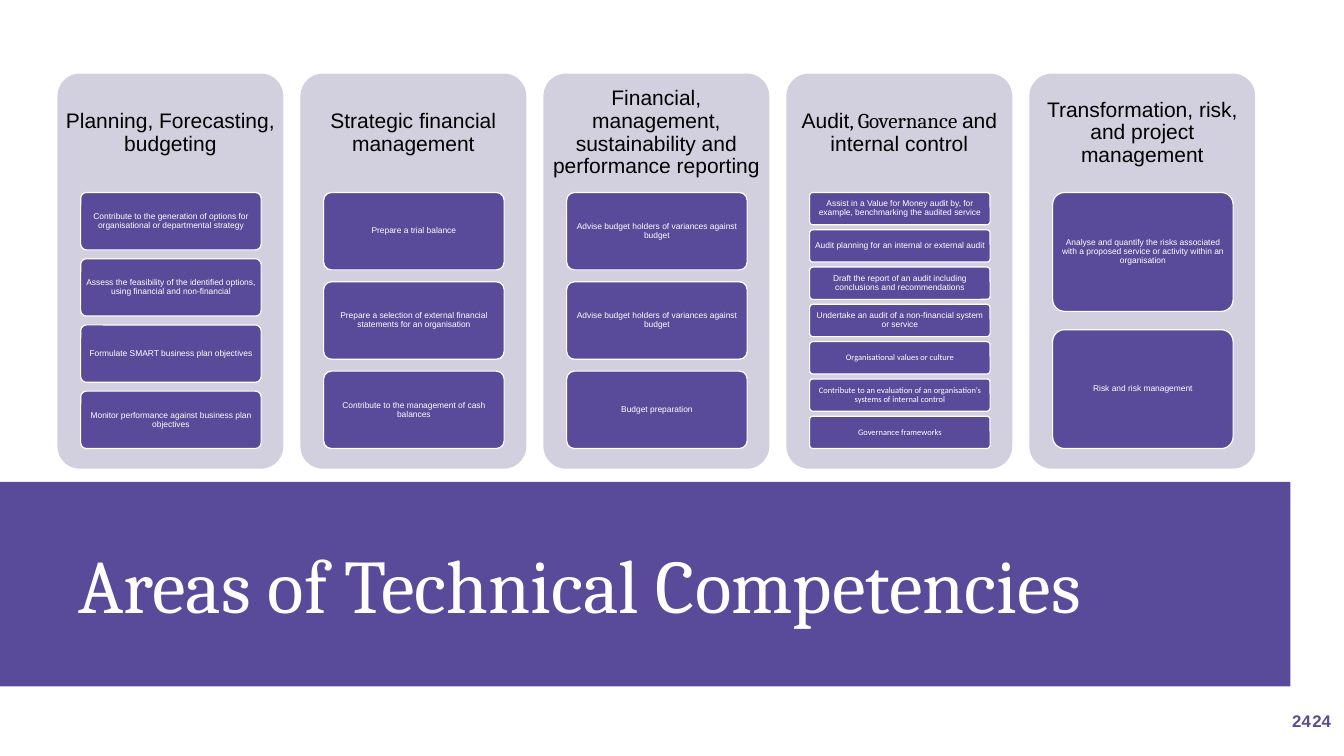
"""Build the slide of technical competency areas."""
from pptx import Presentation
from pptx.dml.color import RGBColor
from pptx.enum.shapes import MSO_SHAPE as Shape
from pptx.enum.text import MSO_ANCHOR as Anchor, PP_ALIGN as Align
from pptx.util import Inches, Pt

TITLE = "Areas of Technical Competencies"
PAGE = "24"
AREAS = [
    (["Planning, Forecasting, budgeting"], [
        "Contribute to the generation of options for organisational or departmental strategy",
        "Assess the feasibility of the identified options, using financial and non-financial",
        "Formulate SMART business plan objectives",
        "Monitor performance against business plan objectives",
    ]),
    (["Strategic financial management"], [
        "Prepare a trial balance",
        "Prepare a selection of external financial statements for an organisation",
        "Contribute to the management of cash balances",
    ]),
    (["Financial, management, sustainability and performance reporting"], [
        "Advise budget holders of variances against budget",
        "Advise budget holders of variances against budget",
        "Budget preparation",
    ]),
    (["Audit", (", Governance ", "Cambria"), "and internal control"], [
        "Assist in a Value for Money audit by, for example, benchmarking the audited service",
        "Audit planning for an internal or external audit",
        "Draft the report of an audit including conclusions and recommendations",
        "Undertake an audit of a non-financial system or service",
        ("Organisational values or culture", "Calibri"),
        ("Contribute to an evaluation of an organisation’s systems of internal control", "Calibri"),
        ("Governance frameworks", "Calibri"),
    ]),
    (["Transformation, risk, and project management"], [
        "Analyse and quantify the risks associated with a proposed service or activity within an organisation",
        "Risk and risk management",
    ]),
]

PURPLE = RGBColor(0x5A, 0x4B, 0x9A)
LILAC = RGBColor(0xD2, 0xD0, 0xDE)
WHITE = RGBColor(0xFF, 0xFF, 0xFF)
BLACK = RGBColor(0, 0, 0)

LEFT, TOP, STEP = 0.57, 0.73, 2.41
WIDE, TALL, HEAD = 2.24, 3.92, 1.18
INDENT, CARD = 0.23, 1.79
STACK, RATIO = 2.54, 0.154


def write(item, parts, size, color, font="Arial", bold=False, align=Align.CENTER,
          anchor=Anchor.MIDDLE, pad=(0.1, 0.05), spacing=None):
    """Fill a shape with one paragraph of text."""
    frame = item.text_frame
    frame.word_wrap = True
    frame.vertical_anchor = anchor
    frame.margin_left = frame.margin_right = Inches(pad[0])
    frame.margin_top = frame.margin_bottom = Inches(pad[1])
    para = frame.paragraphs[0]
    para.alignment = align
    if spacing:
        para.line_spacing = spacing
    for part in parts:
        words, face = (part, font) if isinstance(part, str) else part
        run = para.add_run()
        run.text = words
        run.font.size = Pt(size)
        run.font.name = face
        run.font.bold = bold
        run.font.color.rgb = color


def block(shapes, kind, box, fill, edge=None):
    """Add a filled shape, outlined if an edge colour is given."""
    item = shapes.add_shape(kind, *map(Inches, box))
    item.shadow.inherit = False
    item.fill.solid()
    item.fill.fore_color.rgb = fill
    if kind == Shape.ROUNDED_RECTANGLE:
        item.adjustments[0] = 0.1
    if edge is None:
        item.line.fill.background()
    else:
        item.line.color.rgb = edge
        item.line.width = Pt(0.85)
    return item


def label(shapes, box, parts, size, color, **style):
    """Add a text box."""
    write(shapes.add_textbox(*map(Inches, box)), parts, size, color, **style)


def main():
    """Draw the slide and save it."""
    deck = Presentation()
    deck.slide_width, deck.slide_height = Inches(13.33), Inches(7.5)
    shapes = deck.slides.add_slide(deck.slide_layouts[6]).shapes

    block(shapes, Shape.RECTANGLE, (0, 4.78, 12.8, 2.03), PURPLE)
    label(shapes, (0.68, 5.29, 11.97, 1.01), [TITLE], 54, WHITE, font="Cambria",
          align=Align.LEFT, anchor=Anchor.TOP)
    for left in (11.63, 11.43):
        label(shapes, (left, 6.95, 1.67, 0.4), [PAGE], 12, PURPLE, bold=True,
              align=Align.RIGHT)

    for col, (head, tasks) in enumerate(AREAS):
        left = LEFT + col * STEP
        block(shapes, Shape.ROUNDED_RECTANGLE, (left, TOP, WIDE, TALL), LILAC)
        label(shapes, (left, TOP, WIDE, HEAD), head, 15, BLACK, pad=(0.06, 0.06),
              spacing=0.9)
        count = len(tasks)
        high = STACK / (count + (count - 1) * RATIO)
        for row, task in enumerate(tasks):
            top = TOP + HEAD + row * high * (1 + RATIO)
            card = block(shapes, Shape.ROUNDED_RECTANGLE,
                         (left + INDENT, top, CARD, high), PURPLE, WHITE)
            write(card, [task], 6, WHITE, pad=(0.02, 0.01), spacing=0.9)

    deck.save("out.pptx")


if __name__ == "__main__":
    main()
